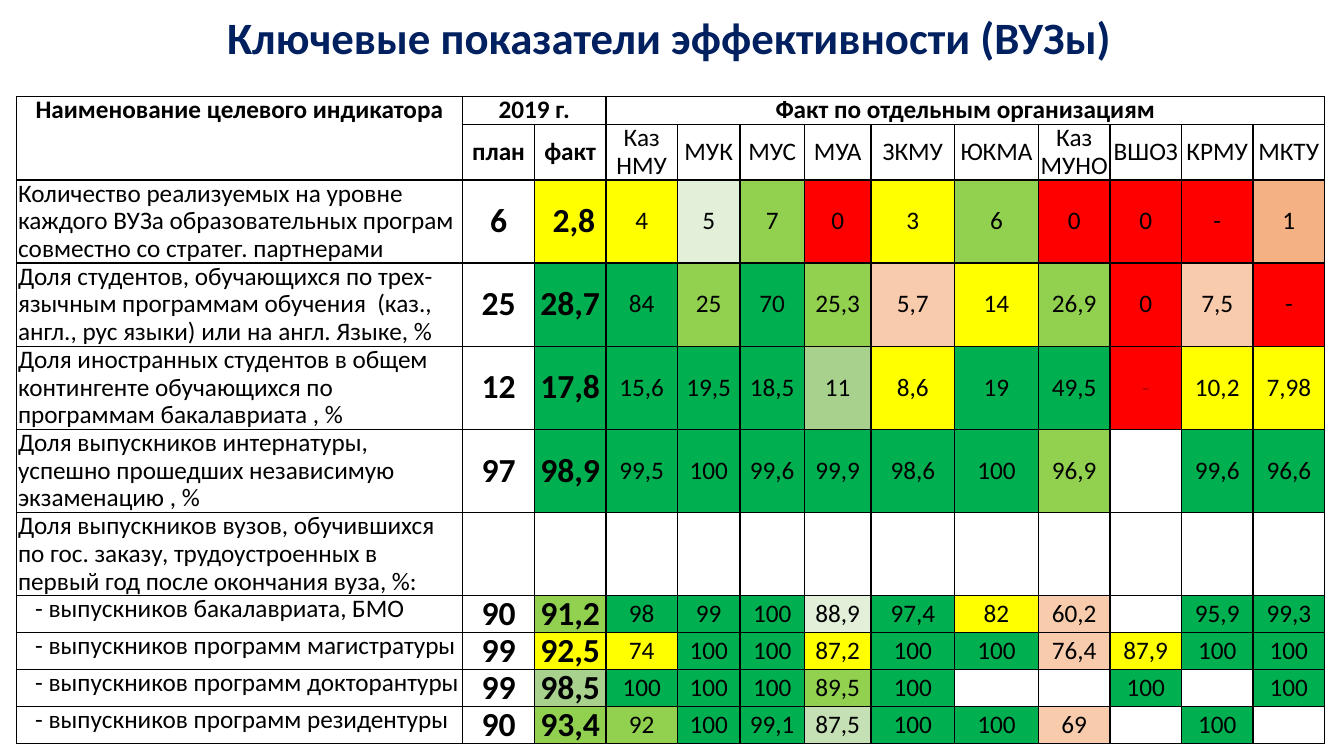
from lxml import etree
from pptx import Presentation, util as u
from pptx.dml.color import RGBColor
from pptx.enum import text
from pptx.oxml.ns import qn

BLACK, WHITE, NAVY, DARK_RED = "000000", "FFFFFF", "002060", "C00000"
RATINGS = {
    "G": "00B050", "L": "92D050", "M": "A9D18E", "S": "C5E0B4", "P": "E2F0D9",
    "Y": "FFFF00", "O": "F4B183", "B": "F8CBAD", "R": "FF0000", "W": WHITE,
}
COLUMN_WIDTHS = [4.43, 0.71, 0.71, 0.71, 0.62, 0.64, 0.66, 0.83, 0.83] + [0.71] * 4
ROW_HEIGHTS = [0.27, 0.55] + [0.82] * 5 + [0.36] * 4
SUBHEADINGS = "план|факт|Каз НМУ|МУК|МУС|МУА|ЗКМУ|ЮКМА|Каз МУНО|ВШОЗ|КРМУ|МКТУ"
INDICATORS = [
    ("Количество реализуемых на уровне каждого ВУЗа образовательных програм совместно со стратег. партнерами",
     "6| 2,8|4|5|7|0|3|6|0|0|-|1", "WYYPLRYLRRRO"),
    ("Доля студентов, обучающихся по трех-язычным программам обучения  (каз., англ., рус языки) или на англ. Языке, %",
     "25|28,7|84|25|70|25,3|5,7|14|26,9|0|7,5|-", "WGGLGLBYLRBR"),
    ("Доля иностранных студентов в общем контингенте обучающихся по программам бакалавриата , %",
     "12|17,8|15,6|19,5|18,5|11|8,6|19|49,5|-|10,2|7,98", "WGGGGMYGGRYY"),
    ("Доля выпускников интернатуры, успешно прошедших независимую экзаменацию , %",
     "97|98,9|99,5|100|99,6|99,9|98,6|100|96,9||99,6|96,6", "WGGGGGGGLWGG"),
    ("Доля выпускников вузов, обучившихся по гос. заказу, трудоустроенных в первый год после окончания вуза, %:",
     "|||||||||||", "WWWWWWWWWWWW"),
    ("- выпускников бакалавриата, БМО",
     "90|91,2|98|99|100|88,9|97,4|82|60,2||95,9|99,3", "WLGGGPGYBWGG"),
    ("- выпускников программ магистратуры",
     "99|92,5|74|100|100|87,2|100|100|76,4|87,9|100|100", "WYYGGYGGBYGG"),
    ("- выпускников программ докторантуры",
     "99|98,5|100|100|100|89,5|100|||100||100", "WMGGGLGWWGWG"),
    ("- выпускников программ резидентуры",
     "90|93,4|92|100|99,1|87,5|100|100|69||100|", "WLLGGSGGBWGW"),
]


def color(value):
    return RGBColor.from_string(value)


def format_paragraph(para, size, bold, ink, align):
    para.alignment = align
    para.line_spacing = 0.9
    para.font.name = "Calibri"
    para.font.size = u.Pt(size)
    para.font.bold = bold
    para.font.color.rgb = color(ink)


def add_borders(cell):
    properties = cell._tc.get_or_add_tcPr()
    for side in ("lnL", "lnR", "lnT", "lnB"):
        line = etree.SubElement(properties, qn(f"a:{side}"), w=str(u.Pt(1)))
        fill = etree.SubElement(line, qn("a:solidFill"))
        etree.SubElement(fill, qn("a:srgbClr"), val=BLACK)


def write_cell(cell, words="", fill=WHITE, size=18, bold=False, ink=BLACK,
               align=text.PP_ALIGN.CENTER, anchor=text.MSO_ANCHOR.MIDDLE, left=0, right=0):
    cell.margin_left, cell.margin_right = u.Inches(left), u.Inches(right)
    cell.margin_top = cell.margin_bottom = 0
    cell.vertical_anchor = anchor
    cell.text = words
    format_paragraph(cell.text_frame.paragraphs[0], size, bold, ink, align)
    cell.fill.solid()
    cell.fill.fore_color.rgb = color(fill)


def add_title(page, left, top, width, height):
    title = page.shapes.title
    title.left, title.top, title.width, title.height = map(u.Inches, (left, top, width, height))
    title.text_frame.text = "Ключевые показатели эффективности (ВУЗы)"
    title.text_frame.vertical_anchor = text.MSO_ANCHOR.MIDDLE
    format_paragraph(title.text_frame.paragraphs[0], 32, True, NAVY, text.PP_ALIGN.CENTER)


def fill_header(table):
    table.cell(0, 0).merge(table.cell(1, 0))
    table.cell(0, 1).merge(table.cell(0, 2))
    table.cell(0, 3).merge(table.cell(0, 12))
    headings = {0: "Наименование целевого индикатора", 1: "2019 г.",
                3: "Факт по отдельным организациям"}
    for column, heading in headings.items():
        write_cell(table.cell(0, column), heading, bold=True, anchor=text.MSO_ANCHOR.TOP)
    for column, heading in enumerate(SUBHEADINGS.split("|"), 1):
        write_cell(table.cell(1, column), heading, bold=column < 3)


def fill_indicator(table, row, label, values, ratings):
    indent = 0.19 if label.startswith("-") else 0.02
    write_cell(table.cell(row, 0), label, align=text.PP_ALIGN.LEFT,
               anchor=text.MSO_ANCHOR.TOP, left=indent)
    for column, (value, rating) in enumerate(zip(values.split("|"), ratings), 1):
        total = column < 3 and value != ""
        muted = (row, column) == (4, 10)
        write_cell(table.cell(row, column), value, RATINGS[rating], size=24 if total else 18,
                   bold=total, ink=DARK_RED if muted else BLACK)


def add_indicator_table(page, left, top, width, height):
    box = map(u.Inches, (left, top, width, height))
    table = page.shapes.add_table(len(ROW_HEIGHTS), len(COLUMN_WIDTHS), *box).table
    table.first_row = table.horz_banding = False
    for column, size in zip(table.columns, COLUMN_WIDTHS):
        column.width = u.Inches(size)
    for row, size in zip(table.rows, ROW_HEIGHTS):
        row.height = u.Inches(size)
    for cell in table.iter_cells():
        add_borders(cell)
    fill_header(table)
    for row, indicator in enumerate(INDICATORS, 2):
        fill_indicator(table, row, *indicator)


def main():
    deck = Presentation()
    deck.slide_width, deck.slide_height = u.Inches(13.33), u.Inches(7.5)
    page = deck.slides.add_slide(deck.slide_layouts[5])
    add_title(page, 0.89, 0, 11.5, 0.79)
    add_indicator_table(page, 0.16, 0.96, sum(COLUMN_WIDTHS), sum(ROW_HEIGHTS))
    deck.save("out.pptx")


if __name__ == "__main__":
    main()
